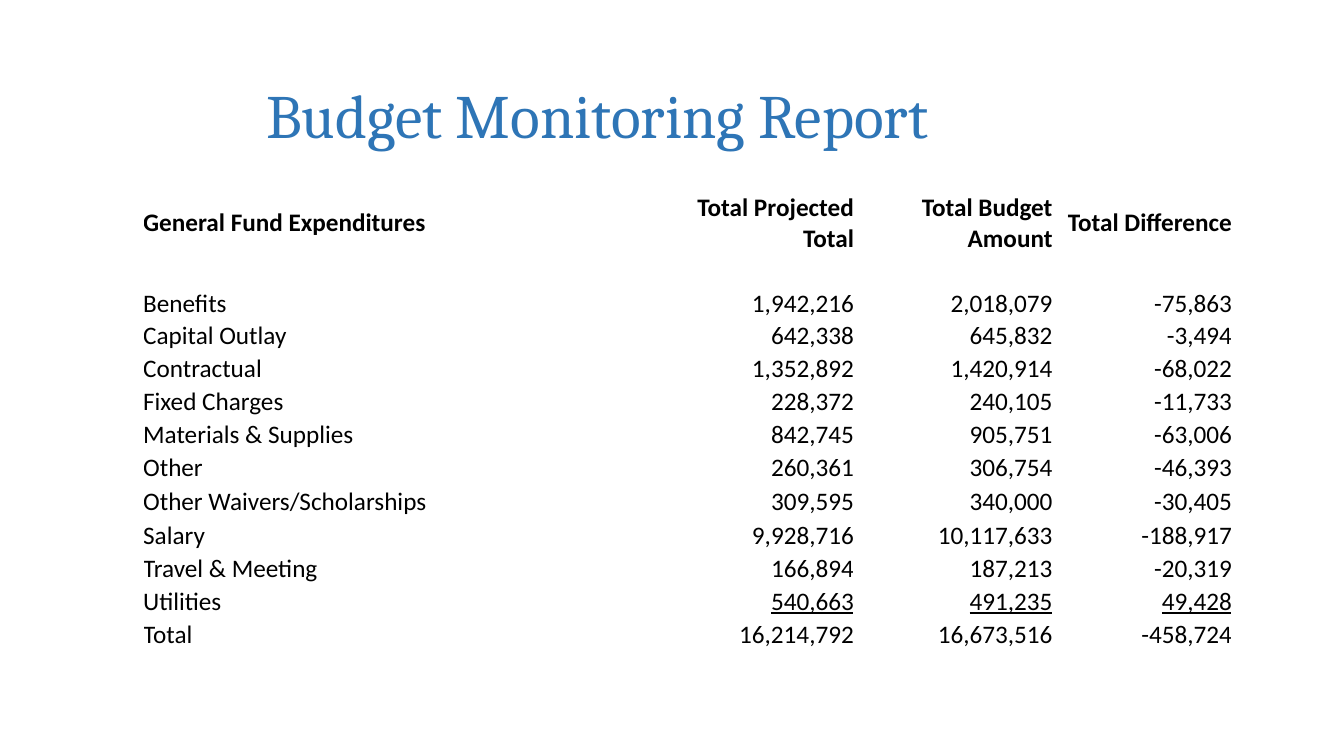
from pptx import Presentation
from pptx import util as u
from pptx.dml.color import RGBColor
from pptx.enum import text

COLORS = {"title": "2E75B6", "text": "000000"}

HEADS = ("General Fund\u00a0Expenditures".replace("\u00a0", " "), "Total Projected Total",
         "Total Budget Amount", "Total Difference")
BLANK = ("", "", "", "")
ITEMS = [
    ("Benefits", "1,942,216", "2,018,079", "-75,863"),
    ("Capital Outlay", "642,338", "645,832", "-3,494"),
    ("Contractual", "1,352,892", "1,420,914", "-68,022"),
    ("Fixed Charges", "228,372", "240,105", "-11,733"),
    ("Materials & Supplies", "842,745", "905,751", "-63,006"),
    ("Other", "260,361", "306,754", "-46,393"),
    ("Other Waivers/Scholarships", "309,595", "340,000", "-30,405"),
    ("Salary", "9,928,716", "10,117,633", "-188,917"),
    ("Travel & Meeting", "166,894", "187,213", "-20,319"),
    ("Utilities", "540,663", "491,235", "49,428"),
    ("Total", "16,214,792", "16,673,516", "-458,724"),
]
WIDTHS = (5.08, 1.97, 1.97, 1.78)
HEAD_H, WAIVER_H = 0.59, 0.35


def add_run(para, words, face, size, color):
    run = para.add_run()
    run.text = words
    run.font.name = face
    run.font.size = u.Pt(size)
    run.font.color.rgb = RGBColor.from_string(COLORS[color])
    return run


def put_title(slide, left, top, width, height):
    title = slide.shapes.title
    title.left, title.top = u.Inches(left), u.Inches(top)
    title.width, title.height = u.Inches(width), u.Inches(height)
    frame = title.text_frame
    frame.word_wrap = True
    frame.vertical_anchor = text.MSO_ANCHOR.MIDDLE
    para = frame.paragraphs[0]
    para.alignment = text.PP_ALIGN.LEFT
    add_run(para, "Budget Monitoring Report", "Cambria", 44, "title")


def fill_cell(cell, words, right, bold, under):
    cell.fill.background()
    cell.margin_left = cell.margin_right = 0
    cell.margin_top = cell.margin_bottom = 0
    cell.vertical_anchor = text.MSO_ANCHOR.MIDDLE
    if words:
        para = cell.text_frame.paragraphs[0]
        para.alignment = text.PP_ALIGN.RIGHT if right else text.PP_ALIGN.LEFT
        run = add_run(para, words, "Calibri", 18, "text")
        run.font.bold = bold
        run.font.underline = under


def put_table(slide, left, top, width, height):
    rows = [HEADS, BLANK] + ITEMS
    table = slide.shapes.add_table(
        len(rows), len(WIDTHS), u.Inches(left), u.Inches(top),
        u.Inches(width), u.Inches(height)).table
    table.first_row = table.horz_banding = False
    for col, size in zip(table.columns, WIDTHS):
        col.width = u.Inches(size)

    # Header and waiver rows are taller; the others share the rest
    even = (height - HEAD_H - WAIVER_H) / (len(rows) - 2)
    tall = {HEADS[0]: HEAD_H, "Other Waivers/Scholarships": WAIVER_H}
    for r, row in enumerate(rows):
        table.rows[r].height = u.Inches(tall.get(row[0], even))
        for c, words in enumerate(row):
            # The last amounts above the total are underlined
            under = c > 0 and row[0] == "Utilities"
            fill_cell(table.cell(r, c), words, c > 0, r == 0, under)


def main():
    prs = Presentation()
    prs.slide_width, prs.slide_height = u.Inches(13.33), u.Inches(7.5)
    slide = prs.slides.add_slide(prs.slide_layouts[5])
    put_title(slide, 2.54, 0.4, 9.88, 1.45)
    put_table(slide, 1.42, 1.91, 10.8, 4.53)
    prs.save("out.pptx")


if __name__ == "__main__":
    main()
